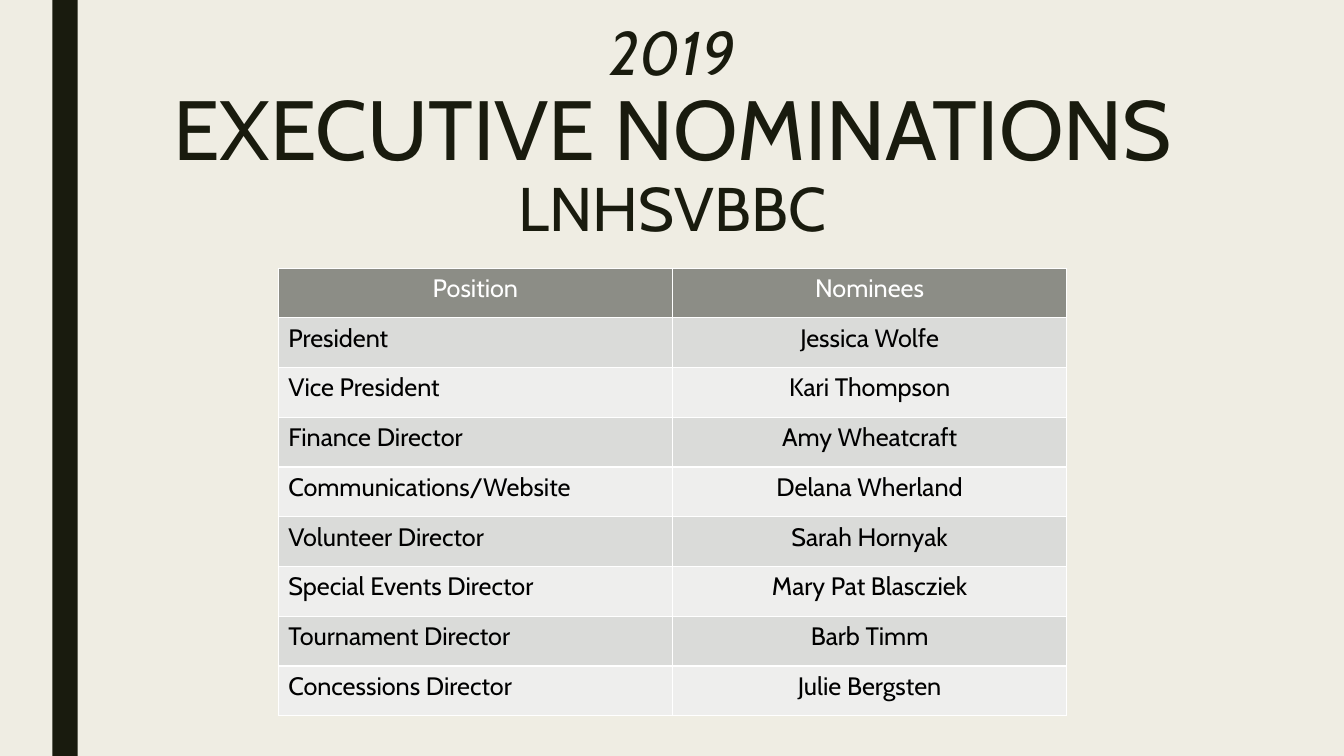
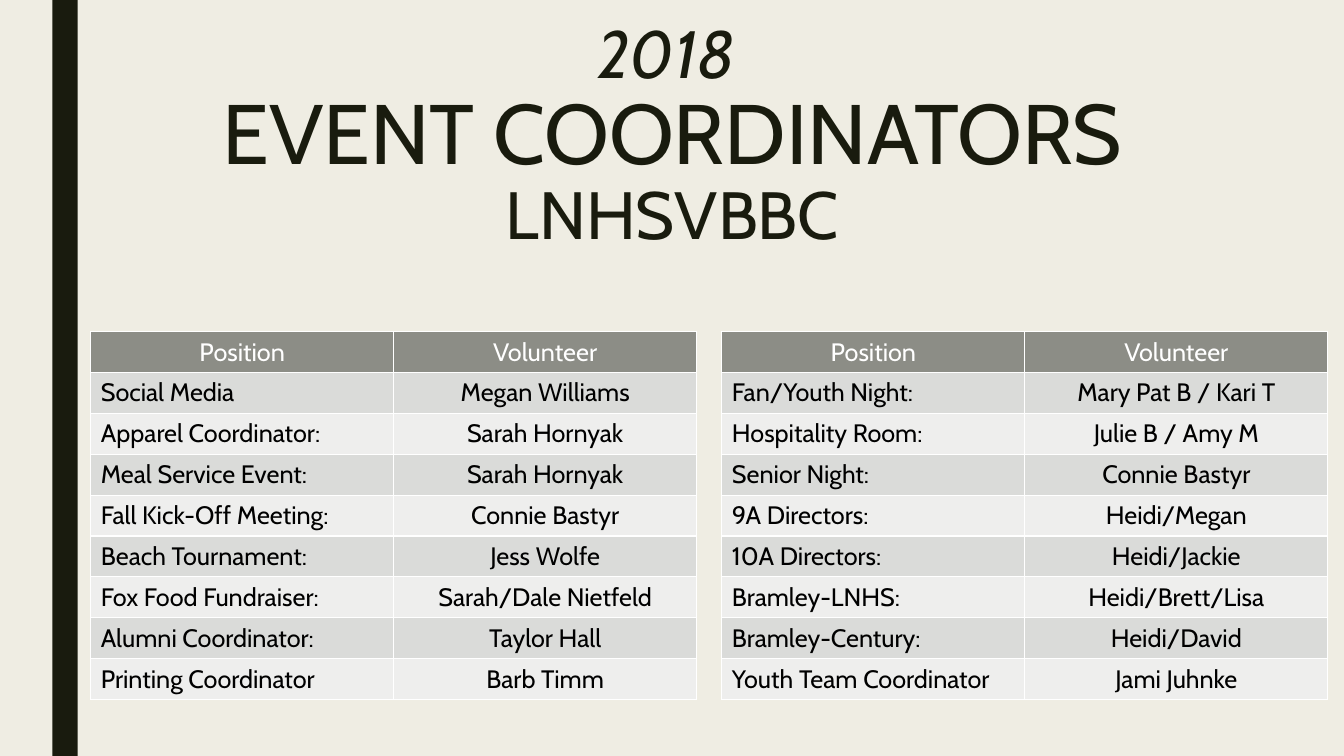
from lxml.etree import SubElement
from pptx import Presentation
from pptx.dml.color import RGBColor
from pptx.enum.shapes import MSO_SHAPE as Shape
from pptx.enum.text import MSO_ANCHOR as Anchor, MSO_AUTO_SIZE as AutoSize, PP_ALIGN as Align
from pptx.oxml.ns import qn
from pptx.util import Inches, Pt

COLORS = {
    "paper": "EFEDE3",
    "ink": "191B0E",
    "header": "8C8D86",
    "odd_row": "DADBD9",
    "even_row": "EEEEED",
    "white": "FFFFFF",
    "black": "000000",
}


class Deck:
    """Hold the shared style and the slide being built."""

    font = "Cabin"

    def __init__(self):
        self.presentation = Presentation()
        self.presentation.slide_width = Inches(13.33)
        self.presentation.slide_height = Inches(7.5)
        background = self.presentation.slide_master.background.fill
        background.solid()
        background.fore_color.rgb = self.color("paper")
        self.slide = None

    def color(self, name):
        return RGBColor.from_string(COLORS[name])

    def new_slide(self):
        self.slide = self.presentation.slides.add_slide(self.presentation.slide_layouts[5])
        band = self.slide.shapes.add_shape(
            Shape.RECTANGLE, Inches(0.52), 0, Inches(0.25), self.presentation.slide_height
        )
        band.shadow.inherit = False
        band.fill.solid()
        band.fill.fore_color.rgb = self.color("ink")
        band.line.fill.background()

    def style(self, paragraph, color, align):
        paragraph.alignment = align
        paragraph.font.name = self.font
        paragraph.font.color.rgb = self.color(color)

    def title(self, left, top, width, height, lines):
        heading = self.slide.shapes.title
        heading.left, heading.top = Inches(left), Inches(top)
        heading.width, heading.height = Inches(width), Inches(height)
        frame = heading.text_frame
        frame.auto_size = AutoSize.NONE
        frame.vertical_anchor = Anchor.TOP
        paragraph = frame.paragraphs[0]
        self.style(paragraph, "ink", Align.CENTER)
        paragraph.line_spacing = 0.89
        for index, line in enumerate(lines):
            if index:
                paragraph.add_line_break()
            for text, size, italic in line:
                run = paragraph.add_run()
                run.text = text
                run.font.size = Pt(size)
                run.font.italic = italic

    def borders(self, cell):
        properties = cell._tc.get_or_add_tcPr()
        for side in ("a:lnL", "a:lnR", "a:lnT", "a:lnB"):
            line = SubElement(properties, qn(side), w=str(Pt(1)))
            fill = SubElement(line, qn("a:solidFill"))
            SubElement(fill, qn("a:srgbClr"), val=COLORS["white"])

    def cell(self, cell, text, fill, color, align):
        self.borders(cell)
        cell.fill.solid()
        cell.fill.fore_color.rgb = self.color(fill)
        paragraph = cell.text_frame.paragraphs[0]
        paragraph.text = text
        self.style(paragraph, color, align)
        paragraph.font.size = Pt(18)
        paragraph.font.bold = False

    def table(self, left, top, width, height, header, people):
        rows = [header, *people]
        table = self.slide.shapes.add_table(
            len(rows), len(header), Inches(left), Inches(top), Inches(width), Inches(height)
        ).table
        table.horz_banding = False
        for row_index, row in enumerate(rows):
            is_header = row_index == 0
            fill = "header" if is_header else ("even_row", "odd_row")[row_index % 2]
            color = "white" if is_header else "black"
            for column, text in enumerate(row):
                align = Align.CENTER if is_header or column else Align.LEFT
                self.cell(table.cell(row_index, column), text, fill, color, align)

    def save(self):
        self.presentation.save("out.pptx")


NOMINEES = [
    ("President", "Jessica Wolfe"),
    ("Vice President", "Kari Thompson"),
    ("Finance Director", "Amy Wheatcraft"),
    ("Communications/Website", "Delana Wherland"),
    ("Volunteer Director", "Sarah Hornyak"),
    ("Special Events Director", "Mary Pat Blascziek"),
    ("Tournament Director", "Barb Timm"),
    ("Concessions Director", "Julie Bergsten"),
]

CLUB_VOLUNTEERS = [
    ("Social Media", "Megan Williams"),
    ("Apparel Coordinator:", "Sarah Hornyak"),
    ("Meal Service Event:", "Sarah Hornyak"),
    ("Fall Kick-Off Meeting:", "Connie Bastyr"),
    ("Beach Tournament:", "Jess Wolfe"),
    ("Fox Food Fundraiser:", "Sarah/Dale Nietfeld"),
    ("Alumni Coordinator:", "Taylor Hall"),
    ("Printing Coordinator", "Barb Timm"),
]

NIGHT_VOLUNTEERS = [
    ("Fan/Youth Night:", "Mary Pat B / Kari T"),
    ("Hospitality Room:", "Julie B / Amy M"),
    ("Senior Night:", "Connie Bastyr"),
    ("9A Directors:", "Heidi/Megan"),
    ("10A Directors:", "Heidi/Jackie"),
    ("Bramley-LNHS:", "Heidi/Brett/Lisa"),
    ("Bramley-Century:", "Heidi/David"),
    ("Youth Team Coordinator", "Jami Juhnke"),
]


def main():
    deck = Deck()

    deck.new_slide()
    deck.title(1.42, 0.18, 10.5, 2.32, [
        [("2019", 44, True)],
        [("EXECUTIVE NOMINATIONS", 60, False)],
        [("LNHSVBBC", 44, False)],
    ])
    deck.table(2.76, 2.66, 7.82, 4.44, ("Position", "Nominees"), NOMINEES)

    deck.new_slide()
    deck.title(1.38, 0.16, 10.58, 2.34, [
        [("2018", 47.7, True), (" ", 39.6, False)],
        [("EVENT COORDINATORS", 60.3, False)],
        [("LNHSVBBC", 47.7, False)],
    ])
    for left, volunteers in ((0.9, CLUB_VOLUNTEERS), (7.16, NIGHT_VOLUNTEERS)):
        deck.table(left, 3.29, 6.01, 3.65, ("Position", "Volunteer"), volunteers)

    deck.save()


if __name__ == "__main__":
    main()
